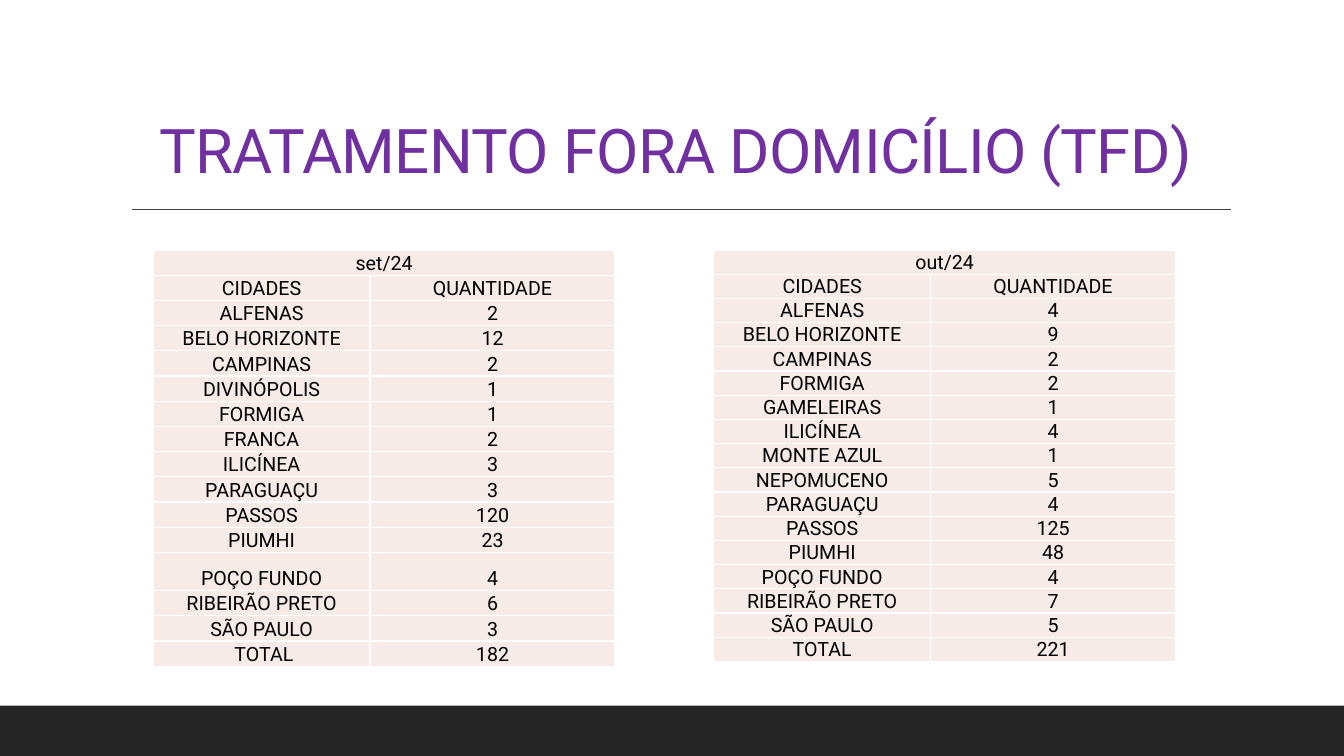
from dataclasses import dataclass

from lxml import etree
from pptx import Presentation
from pptx.dml.color import RGBColor
from pptx.enum.shapes import MSO_CONNECTOR, MSO_SHAPE
from pptx.enum.text import MSO_ANCHOR, MSO_AUTO_SIZE, PP_ALIGN
from pptx.oxml.ns import qn
from pptx.util import Inches, Pt

RECT = MSO_SHAPE.RECTANGLE
STRAIGHT = MSO_CONNECTOR.STRAIGHT
BOTTOM = MSO_ANCHOR.BOTTOM
CENTER = PP_ALIGN.CENTER
NO_FIT = MSO_AUTO_SIZE.NONE


@dataclass(frozen=True)
class Theme:
    font: str = "Roboto"
    title: str = "7030A0"
    text: str = "000000"
    cell: str = "F7EBE8"
    edge: str = "FFFFFF"
    rule: str = "404040"
    band: str = "262626"
    title_size: int = 44
    cell_size: int = 14
    edge_size: int = 1


THEME = Theme()
HEAD = ("CIDADES", "QUANTIDADE")
COLS = (2.15, 2.43)
SEPT = [
    ("ALFENAS", 2), ("BELO HORIZONTE", 12), ("CAMPINAS", 2),
    ("DIVINÓPOLIS", 1), ("FORMIGA", 1), ("FRANCA", 2), ("ILICÍNEA", 3),
    ("PARAGUAÇU", 3), ("PASSOS", 120), ("PIUMHI", 23), ("POÇO FUNDO", 4),
    ("RIBEIRÃO PRETO", 6), ("SÃO PAULO", 3), (" TOTAL", 182),
]
OCT = [
    ("ALFENAS", 4), ("BELO HORIZONTE", 9), ("CAMPINAS", 2), ("FORMIGA", 2),
    ("GAMELEIRAS", 1), ("ILICÍNEA", 4), ("MONTE AZUL", 1),
    ("NEPOMUCENO", 5), ("PARAGUAÇU", 4), ("PASSOS", 125), ("PIUMHI", 48),
    ("POÇO FUNDO", 4), ("RIBEIRÃO PRETO", 7), ("SÃO PAULO", 5),
    ("TOTAL", 221),
]


def paint(fill, color):
    fill.solid()
    fill.fore_color.rgb = RGBColor.from_string(color)


def write(frame, text, size, color, lead=None, track=None):
    """Fill a text frame with one centred line; track is in points."""
    para = frame.paragraphs[0]
    para.alignment = CENTER
    if lead:
        para.line_spacing = lead
    run = para.add_run()
    run.text = text
    run.font.name = THEME.font
    run.font.size = Pt(size)
    run.font.color.rgb = RGBColor.from_string(color)
    if track is not None:
        run.font._element.set("spc", str(round(track * 100)))


def add_band(slide):
    band = slide.shapes.add_shape(
        RECT, 0, Inches(7), Inches(13.33), Inches(0.5))
    band.shadow.inherit = False
    paint(band.fill, THEME.band)
    band.line.fill.background()


def add_rule(slide):
    y = Inches(2.08)
    rule = slide.shapes.add_connector(
        STRAIGHT, Inches(1.31), y, Inches(12.21), y)
    rule.line.width = Pt(1)
    paint(rule.line.fill, THEME.rule)
    etree.SubElement(rule._element.spPr, qn("a:effectLst"))


def set_title(slide, text):
    title = slide.shapes.title
    title.left, title.top = Inches(1.2), Inches(0.31)
    title.width, title.height = Inches(11), Inches(1.59)
    frame = title.text_frame
    frame.word_wrap = True
    frame.auto_size = NO_FIT
    frame.vertical_anchor = BOTTOM
    write(frame, text, THEME.title_size, THEME.title, lead=0.9, track=-0.5)


def add_edges(cell):
    props = cell._tc.get_or_add_tcPr()
    for side in ("lnL", "lnR", "lnT", "lnB"):
        line = etree.SubElement(
            props, qn(f"a:{side}"), w=str(Pt(THEME.edge_size)))
        fill = etree.SubElement(line, qn("a:solidFill"))
        etree.SubElement(fill, qn("a:srgbClr"), val=THEME.edge)


def style_cell(cell):
    cell.margin_left = cell.margin_right = cell.margin_top = Inches(0.01)
    cell.margin_bottom = 0
    cell.vertical_anchor = BOTTOM
    add_edges(cell)
    paint(cell.fill, THEME.cell)


def add_month(slide, left, month, data, pitch, tall=None):
    """Add a month's table; tall maps a city to its own row height."""
    rows = [(month, ""), HEAD, *data]
    height = Inches(4.14)
    shape = slide.shapes.add_table(
        len(rows), len(COLS), Inches(left), Inches(2.48),
        Inches(sum(COLS)), height)
    table = shape.table
    table.first_row = table.horz_banding = False
    for col, width in zip(table.columns, COLS):
        col.width = Inches(width)
    table.cell(0, 0).merge(table.cell(0, 1))
    for r, row in enumerate(rows):
        table.rows[r].height = Inches((tall or {}).get(row[0], pitch))
        for c, value in enumerate(row):
            cell = table.cell(r, c)
            style_cell(cell)
            if value != "":
                write(cell.text_frame, str(value), THEME.cell_size,
                      THEME.text)
    shape.height = height


def main():
    deck = Presentation()
    deck.slide_width, deck.slide_height = Inches(13.33), Inches(7.5)
    slide = deck.slides.add_slide(deck.slide_layouts.get_by_name("Title Only"))
    add_band(slide)
    add_rule(slide)
    set_title(slide, "TRATAMENTO FORA DOMICÍLIO (TFD)")
    add_month(slide, 1.52, "set/24", SEPT, 0.25, {"POÇO FUNDO": 0.38})
    add_month(slide, 7.08, "out/24", OCT, 0.22)
    deck.save("out.pptx")


if __name__ == "__main__":
    main()
